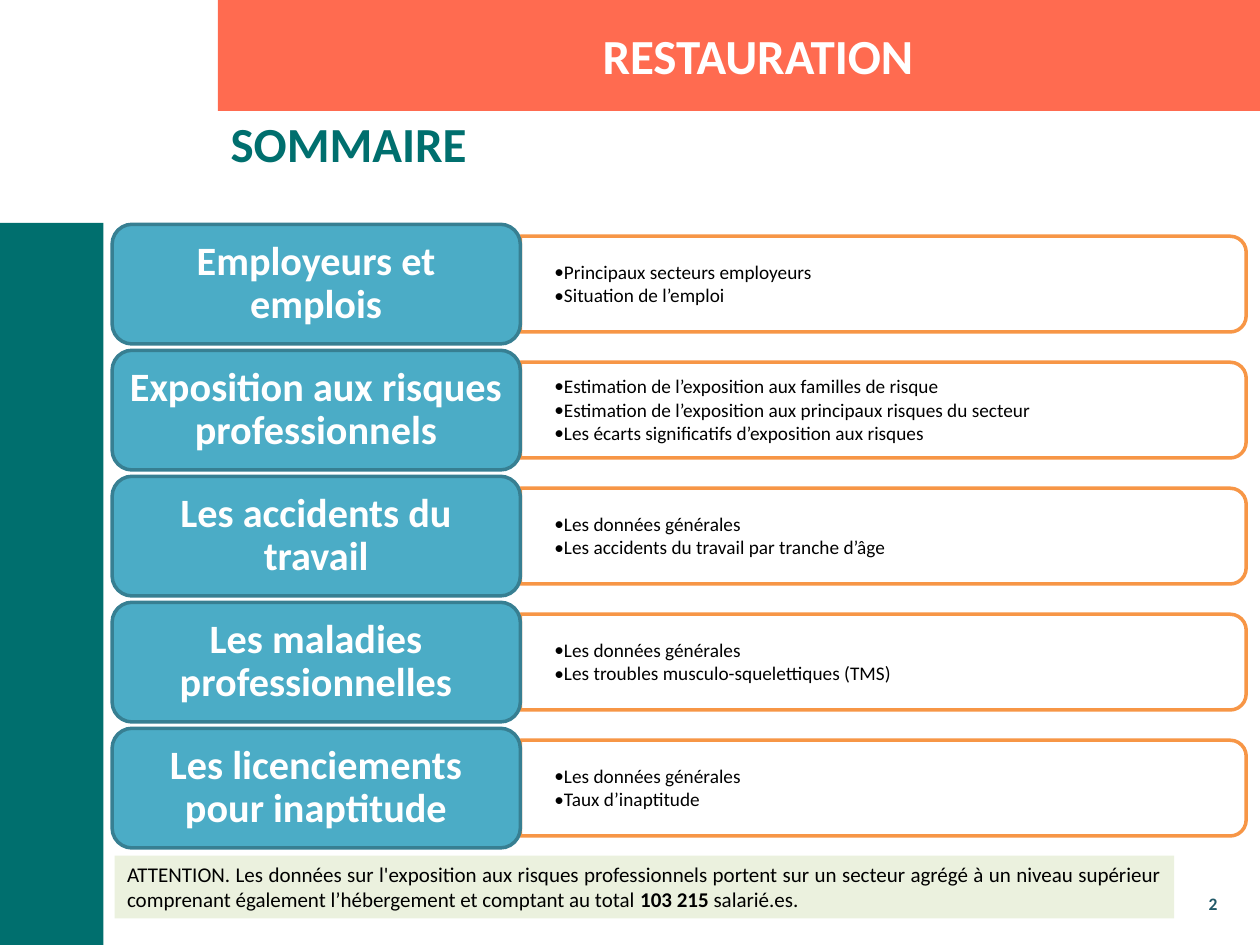
"""Build the summary slide of the catering sector report."""
from dataclasses import dataclass
from typing import Any

import lxml.etree
import pptx
import pptx.dml.color
import pptx.enum.shapes
import pptx.enum.text
import pptx.oxml.ns
import pptx.util

Inches = pptx.util.Inches
Shape = pptx.enum.shapes.MSO_SHAPE
Align = pptx.enum.text.PP_ALIGN
Anchor = pptx.enum.text.MSO_ANCHOR


@dataclass(frozen=True)
class Theme:
    font: str = "Calibri"
    coral: str = "FF6B50"
    teal: str = "006F6E"
    blue: str = "4BACC6"
    blue_edge: str = "377F92"
    orange: str = "F79646"
    pale_green: str = "EBF1DE"
    number: str = "215968"
    white: str = "FFFFFF"
    black: str = "000000"
    heading_size: float = 28
    label_size: float = 23
    note_size: float = 12
    detail_size: float = 11
    number_size: float = 10
    edge_width: float = 2


@dataclass(frozen=True)
class Area:
    left: float
    top: float
    width: float
    height: float

    def lengths(self) -> tuple[int, ...]:
        return tuple(Inches(v) for v in (self.left, self.top, self.width, self.height))


@dataclass(frozen=True)
class Section:
    label: str
    details: tuple[str, ...]


THEME = Theme()
FIRST_TOP = 1.78
PITCH = 1.0
LABEL_HEIGHT = 0.95
PANEL_LEFT, PANEL_WIDTH, PANEL_HEIGHT = 4.13, 5.76, 0.76
GENERAL = "Les données générales"
SECTIONS = (
    Section("Employeurs et emplois", ("Principaux secteurs employeurs", "Situation de l’emploi")),
    Section("Exposition aux risques professionnels", (
        "Estimation de l’exposition aux familles de risque",
        "Estimation de l’exposition aux principaux risques du secteur",
        "Les écarts significatifs d’exposition aux risques",
    )),
    Section("Les accidents du travail", (GENERAL, "Les accidents du travail par tranche d’âge")),
    Section("Les maladies professionnelles", (GENERAL, "Les troubles musculo-squelettiques (TMS)")),
    Section("Les licenciements pour inaptitude", (GENERAL, "Taux d’inaptitude")),
)
NOTE = (
    "ATTENTION. Les données sur l'exposition aux risques professionnels portent sur un secteur "
    "agrégé à un niveau supérieur comprenant également l’hébergement et comptant au total ",
    "103 215",
    " salarié.es.",
)


def colour(value: str) -> pptx.dml.color.RGBColor:
    return pptx.dml.color.RGBColor.from_string(value)


def style(para: Any, size: float, value: str, bold: bool = False, align: Any = Align.LEFT) -> None:
    para.alignment = align
    for span in para.runs:
        span.font.name = THEME.font
        span.font.size = pptx.util.Pt(size)
        span.font.bold = bold
        span.font.color.rgb = colour(value)


def set_frame(box: Any, anchor: Any, side: float = 0.1, end: float = 0.05) -> Any:
    frame = box.text_frame
    frame.word_wrap = True
    frame.vertical_anchor = anchor
    frame.margin_left = frame.margin_right = Inches(side)
    frame.margin_top = frame.margin_bottom = Inches(end)
    return frame


def add_block(page: Any, kind: Any, area: Area, fill: str, edge: str | None = None) -> Any:
    block = page.shapes.add_shape(kind, *area.lengths())
    block.shadow.inherit = False
    block.fill.solid()
    block.fill.fore_color.rgb = colour(fill)
    if edge:
        block.line.color.rgb = colour(edge)
        block.line.width = pptx.util.Pt(THEME.edge_width)
    else:
        block.line.fill.background()
    return block


def add_text(page: Any, area: Area, text: str, size: float, value: str, align: Any) -> None:
    frame = set_frame(page.shapes.add_textbox(*area.lengths()), Anchor.TOP)
    frame.text = text
    style(frame.paragraphs[0], size, value, True, align)


def add_bullet(para: Any) -> None:
    para.level = 1
    properties = para._p.get_or_add_pPr()
    properties.set("marL", str(Inches(0.06)))
    properties.set("indent", str(-Inches(0.06)))
    for tag, key, value in (("a:buFont", "typeface", THEME.font), ("a:buChar", "char", "•")):
        lxml.etree.SubElement(properties, pptx.oxml.ns.qn(tag)).set(key, value)


def add_section(page: Any, section: Section, top: float) -> None:
    middle = top + LABEL_HEIGHT / 2
    upright = Area(PANEL_LEFT + (PANEL_WIDTH - PANEL_HEIGHT) / 2, middle - PANEL_WIDTH / 2,
                   PANEL_HEIGHT, PANEL_WIDTH)
    panel = add_block(page, Shape.ROUND_2_SAME_RECTANGLE, upright, THEME.white, THEME.orange)
    panel.rotation = 90

    box = page.shapes.add_textbox(*Area(PANEL_LEFT, middle - 0.34, 5.72, 0.69).lengths())
    frame = set_frame(box, Anchor.MIDDLE, 0.27, 0.14)
    frame.text = "\n".join(section.details)
    for para in frame.paragraphs:
        add_bullet(para)
        para.line_spacing = 0.9
        para.space_after = pptx.util.Pt(1.65)
        style(para, THEME.detail_size, THEME.black)

    label = add_block(page, Shape.ROUNDED_RECTANGLE, Area(0.89, top, 3.24, LABEL_HEIGHT),
                      THEME.blue, THEME.blue_edge)
    frame = set_frame(label, Anchor.MIDDLE, 0.08)
    frame.text = section.label
    frame.paragraphs[0].line_spacing = 0.9
    style(frame.paragraphs[0], THEME.label_size, THEME.white, True, Align.CENTER)


def add_title(page: Any) -> None:
    title = page.shapes.title
    title.left, title.top, title.width, title.height = Area(1.73, 0.85, 8.25, 0.85).lengths()
    frame = set_frame(title, Anchor.TOP)
    frame.text = "SOMMAIRE"
    style(frame.paragraphs[0], THEME.heading_size, THEME.teal, True)


def add_note(page: Any) -> None:
    note = add_block(page, Shape.RECTANGLE, Area(0.91, 6.79, 8.41, 0.5), THEME.pale_green)
    para = set_frame(note, Anchor.MIDDLE).paragraphs[0]
    for text in NOTE:
        para.add_run().text = text
    style(para, THEME.note_size, THEME.black, align=Align.JUSTIFY)
    para.runs[1].font.bold = True


def main() -> None:
    deck = pptx.Presentation()
    deck.slide_width, deck.slide_height = Inches(10), Inches(7.5)
    page = deck.slides.add_slide(deck.slide_layouts[5])
    add_block(page, Shape.RECTANGLE, Area(1.73, 0, 8.27, 0.88), THEME.coral)
    add_block(page, Shape.RECTANGLE, Area(0, 1.77, 0.82, 5.73), THEME.teal)
    add_text(page, Area(8.74, 7.04, 1.02, 0.32), "2", THEME.number_size, THEME.number, Align.RIGHT)
    add_title(page)
    for index, section in enumerate(SECTIONS):
        add_section(page, section, FIRST_TOP + index * PITCH)
    add_note(page)
    add_text(page, Area(2.15, 0.15, 7.73, 0.57), "RESTAURATION", THEME.heading_size,
             THEME.white, Align.CENTER)
    deck.save("out.pptx")


if __name__ == "__main__":
    main()
